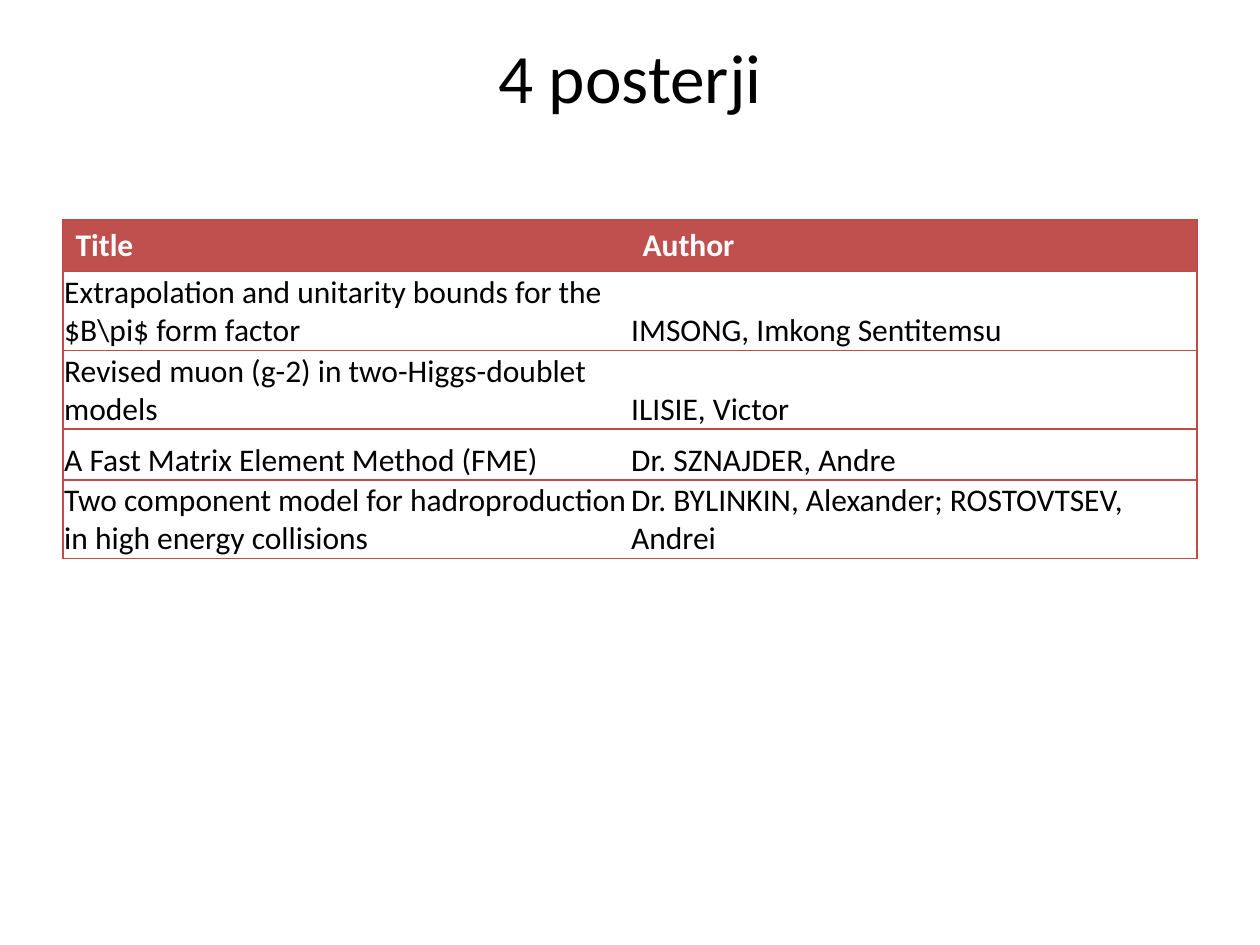
from typing import NamedTuple

from lxml import etree
from pptx import Presentation
from pptx import util as u
from pptx.dml.color import RGBColor
from pptx.enum import text
from pptx.oxml.ns import qn

PX = 914400 / 126  # EMU in one px
COLORS = {"ink": "000000", "header": "C0504D", "header_text": "FFFFFF", "rule": "BF4C48"}
HEADER_FORMAT = {"size": u.Pt(18), "name": "Calibri", "bold": True}
BODY_FORMAT = {**HEADER_FORMAT, "bold": False}
TITLE_FORMAT = {**BODY_FORMAT, "size": u.Pt(39.6)}
BODY_CELL = {
    "vertical_anchor": text.MSO_ANCHOR.BOTTOM,
    "margin_left": u.Inches(0.01),
    "margin_right": u.Inches(0.01),
    "margin_top": u.Inches(0.01),
    "margin_bottom": 0,
}


class Poster(NamedTuple):
    title: str
    author: str
    height: int


HEADER = Poster("Title", "Author", 51)
POSTERS = [
    Poster("Extrapolation and unitarity bounds for the $B\\pi$ form factor",
           "IMSONG, Imkong Sentitemsu", 79),
    Poster("Revised muon (g-2) in two-Higgs-doublet models", "ILISIE, Victor", 79),
    Poster("A Fast Matrix Element Method (FME)", "Dr. SZNAJDER, Andre", 51),
    Poster("Two component model for hadroproduction in high energy collisions",
           "Dr. BYLINKIN, Alexander; ROSTOVTSEV, Andrei", 78),
]


def px(length: int) -> int:
    return round(length * PX)


def set_all(target, values: dict) -> None:
    for name, value in values.items():
        setattr(target, name, value)


def write(para, words: str, font_format: dict, color: str) -> None:
    span = para.add_run()
    span.text = words
    set_all(span.font, font_format)
    span.font.color.rgb = RGBColor.from_string(COLORS[color])


def add_borders(cell, outer_side: str) -> None:
    """Rule the cell above, below and on its outer side only."""
    properties = cell._tc.get_or_add_tcPr()
    for side in "LRTB":
        line = etree.SubElement(properties, qn(f"a:ln{side}"), w=str(u.Pt(0.75)))
        if side in ("T", "B", outer_side):
            fill = etree.SubElement(line, qn("a:solidFill"))
            etree.SubElement(fill, qn("a:srgbClr"), val=COLORS["rule"])
        else:
            etree.SubElement(line, qn("a:noFill"))


def fill_row(table, index: int, poster: Poster) -> None:
    is_header = index == 0
    table.rows[index].height = px(poster.height)
    cells = zip(table.rows[index].cells, (poster.title, poster.author), "LR")
    for cell, words, outer_side in cells:
        add_borders(cell, outer_side)
        para = cell.text_frame.paragraphs[0]
        if is_header:
            cell.fill.solid()
            cell.fill.fore_color.rgb = RGBColor.from_string(COLORS["header"])
            write(para, words, HEADER_FORMAT, "header_text")
        else:
            cell.fill.background()
            set_all(cell, BODY_CELL)
            write(para, words, BODY_FORMAT, "ink")


def main() -> None:
    deck = Presentation()
    deck.slide_width, deck.slide_height = px(1260), px(945)
    page = deck.slides.add_slide(deck.slide_layouts[5])

    # Title
    title = page.shapes.title
    set_all(title, {"left": px(63), "top": px(38), "width": px(1134), "height": px(76)})
    set_all(title.text_frame, {"auto_size": text.MSO_AUTO_SIZE.NONE,
                               "vertical_anchor": text.MSO_ANCHOR.MIDDLE})
    para = title.text_frame.paragraphs[0]
    para.alignment = text.PP_ALIGN.CENTER
    write(para, "4 posterji", TITLE_FORMAT, "ink")

    # Poster table
    rows = [HEADER, *POSTERS]
    height = sum(row.height for row in rows)
    table = page.shapes.add_table(len(rows), 2, px(63), px(220), px(1134), px(height)).table
    table.horz_banding = False
    for index, row in enumerate(rows):
        fill_row(table, index, row)

    deck.save("out.pptx")


if __name__ == "__main__":
    main()
